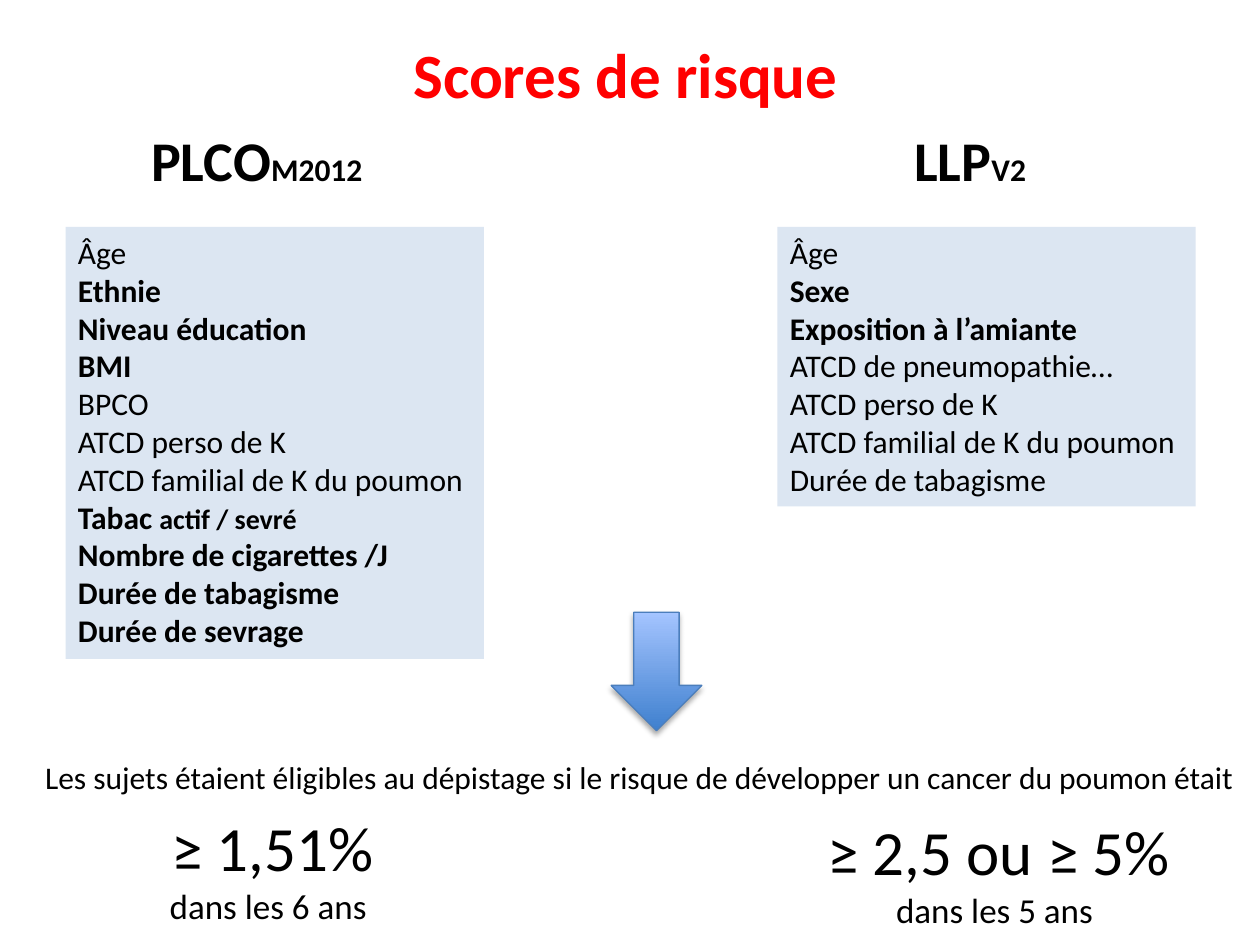
import pptx
import pptx.util
import pptx.oxml
import pptx.oxml.ns
from pptx.dml.color import RGBColor
from pptx.enum.shapes import MSO_SHAPE
from pptx.enum.text import MSO_ANCHOR, MSO_AUTO_SIZE, PP_ALIGN
from pptx.util import Inches

BLACK = RGBColor(0x00, 0x00, 0x00)
RED = RGBColor(0xFF, 0x00, 0x00)
PANEL = RGBColor(0xDC, 0xE6, 0xF2)
ARROW_DARK = RGBColor(0x3F, 0x80, 0xCE)
ARROW_LIGHT = RGBColor(0xA4, 0xC4, 0xFF)
ARROW_EDGE = RGBColor(0x4B, 0x7E, 0xBC)

PLCO_FACTORS = [
    [("Âge", 18, False)],
    [("Ethnie", 18, True)],
    [("Niveau éducation", 18, True)],
    [("BMI", 18, True)],
    [("BPCO", 18, False)],
    [("ATCD perso de K", 18, False)],
    [("ATCD familial de K du poumon", 18, False)],
    [("Tabac ", 18, True), ("actif / sevré", 16, True)],
    [("Nombre de cigarettes /J", 18, True)],
    [("Durée de tabagisme", 18, True)],
    [("Durée de sevrage", 18, True)],
]
LLP_FACTORS = [
    [("Âge", 18, False)],
    [("Sexe", 18, True)],
    [("Exposition à l’amiante", 18, True)],
    [("ATCD de pneumopathie…", 18, False)],
    [("ATCD perso de K", 18, False)],
    [("ATCD familial de K du poumon", 18, False)],
    [("Durée de tabagisme", 18, False)],
]
SHADOW = (
    '<a:outerShdw %s blurRad="40000" dist="23000" dir="5400000" rotWithShape="0">'
    '<a:srgbClr val="000000"><a:alpha val="35000"/></a:srgbClr></a:outerShdw>'
)


def apply_format(target, values):
    """Set each attribute of the target from a dict."""
    for name, value in values.items():
        setattr(target, name, value)


def place(box, left, top, width, height):
    """Position a box given in inches."""
    sides = zip(("left", "top", "width", "height"), (left, top, width, height))
    apply_format(box, {name: Inches(value) for name, value in sides})


def write(box, lines, align=PP_ALIGN.LEFT, color=BLACK):
    """Fill a box with lines made of (text, size, bold) spans."""
    frame = box.text_frame
    apply_format(frame, {
        "word_wrap": False,
        "auto_size": MSO_AUTO_SIZE.NONE,
        "vertical_anchor": MSO_ANCHOR.TOP,
    })
    for index, line in enumerate(lines):
        para = frame.add_paragraph() if index else frame.paragraphs[0]
        para.alignment = align
        for text, size, bold in line:
            span = para.add_run()
            span.text = text
            apply_format(span.font, {
                "name": "Calibri", "size": pptx.util.Pt(size), "bold": bold,
            })
            span.font.color.rgb = color


def add_label(page, bounds, lines, align=PP_ALIGN.LEFT):
    """Add a plain text box."""
    box = page.shapes.add_textbox(*map(Inches, bounds))
    write(box, lines, align)


def add_panel(page, bounds, lines):
    """Add a tinted list of risk factors."""
    box = page.shapes.add_shape(MSO_SHAPE.RECTANGLE, *map(Inches, bounds))
    box.shadow.inherit = False
    box.fill.solid()
    box.fill.fore_color.rgb = PANEL
    box.line.fill.background()
    write(box, lines)


def add_down_arrow(page, bounds):
    """Add the shaded arrow that leads to the thresholds."""
    arrow = page.shapes.add_shape(MSO_SHAPE.DOWN_ARROW, *map(Inches, bounds))
    arrow.fill.gradient()
    arrow.fill.gradient_angle = 90
    for stop, color in zip(arrow.fill.gradient_stops, (ARROW_DARK, ARROW_LIGHT)):
        stop.color.rgb = color
    arrow.line.color.rgb = ARROW_EDGE
    arrow.line.width = pptx.util.Pt(0.75)
    arrow.shadow.inherit = False
    effects = arrow.element.spPr.find(pptx.oxml.ns.qn("a:effectLst"))
    effects.append(pptx.oxml.parse_xml(SHADOW % pptx.oxml.ns.nsdecls("a")))


def main():
    """Build the slide that compares the two risk scores."""
    deck = pptx.Presentation()
    apply_format(deck, {"slide_width": Inches(10), "slide_height": Inches(7.5)})
    page = deck.slides.add_slide(deck.slide_layouts[5])
    title = page.shapes.title
    place(title, 3.18, 0.23, 3.61, 0.71)
    write(title, [[("Scores de risque", 36, True)]], color=RED)

    add_label(page, (1.1, 0.95, 1.89, 0.64), [[("PLCO", 32, True), ("M2012", 18, True)]])
    add_label(page, (7.16, 0.95, 1.08, 0.64), [[("LLP", 32, True), ("V2", 18, True)]],
              PP_ALIGN.CENTER)
    add_panel(page, (0.52, 1.8, 3.32, 3.43), PLCO_FACTORS)
    add_panel(page, (6.17, 1.8, 3.32, 2.22), LLP_FACTORS)
    add_down_arrow(page, (4.85, 4.86, 0.72, 0.94))
    add_label(page, (0.26, 5.97, 9.76, 0.4), [[(
        "Les sujets étaient éligibles au dépistage si le risque de développer "
        "un cancer du poumon était", 18, False)]])
    for bounds, threshold, period in (
        ((1.25, 6.37, 1.82, 1.04), "≥ 1,51%", "dans les 6 ans "),
        ((6.45, 6.4, 2.95, 1.04), "≥ 2,5 ou ≥ 5%", "dans les 5 ans "),
    ):
        add_label(page, bounds, [[(threshold, 36, False)], [(period, 20, False)]],
                  PP_ALIGN.CENTER)
    deck.save("out.pptx")


if __name__ == "__main__":
    main()
